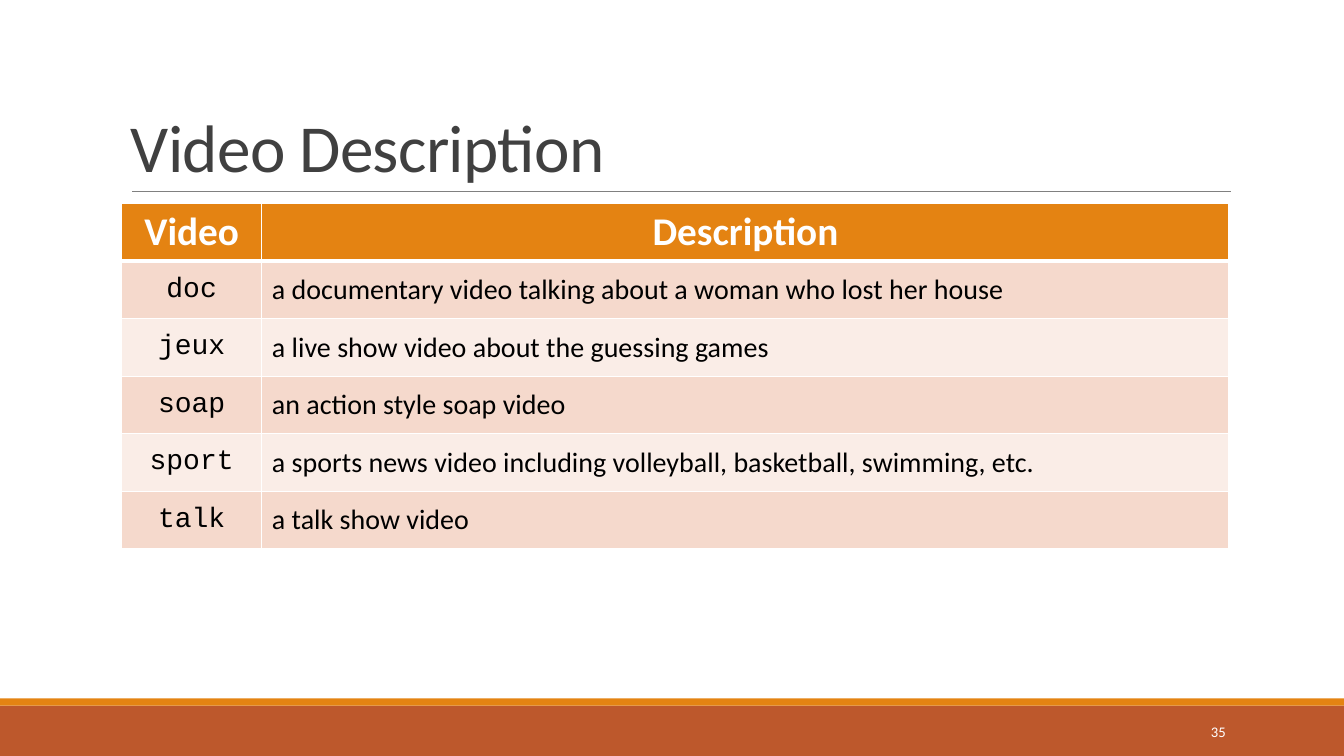
from lxml import etree
from pptx import Presentation
from pptx.dml.color import RGBColor
from pptx.enum.shapes import MSO_CONNECTOR, MSO_SHAPE
from pptx.enum.text import MSO_ANCHOR, PP_ALIGN
from pptx.oxml.ns import qn
from pptx.util import Cm, Pt

# Content
TITLE = "Video Description"
PAGE_NUMBER = "35"
HEADERS = ("Video", "Description")
VIDEOS = [
    ("doc", "a documentary video talking about a woman who lost her house"),
    ("jeux", "a live show video about the guessing games"),
    ("soap", "an action style soap video"),
    ("sport", "a sports news video including volleyball, basketball, swimming, etc."),
    ("talk", "a talk show video"),
]

# Style
ORANGE = RGBColor(0xE4, 0x83, 0x12)
RUST = RGBColor(0xBD, 0x58, 0x2C)
ROW_TINTS = (RGBColor(0xF5, 0xD9, 0xCC), RGBColor(0xFA, 0xED, 0xE7))
WHITE = RGBColor(0xFF, 0xFF, 0xFF)
BLACK = RGBColor(0, 0, 0)
DARK_GRAY = RGBColor(0x40, 0x40, 0x40)
GRAY = RGBColor(0x80, 0x80, 0x80)
SANS, MONO = "Calibri", "Courier New"
LEFT, CENTER, RIGHT = PP_ALIGN.LEFT, PP_ALIGN.CENTER, PP_ALIGN.RIGHT
MIDDLE, BOTTOM = MSO_ANCHOR.MIDDLE, MSO_ANCHOR.BOTTOM

# Layout in centimetres
PAGE_WIDTH, PAGE_HEIGHT = 33.87, 19.05
FOOTER_TOP, STRIPE_TOP = 17.78, 17.6
RULE_LEFT, RULE_RIGHT, RULE_TOP = 3.33, 31.01, 4.82
TABLE_LEFT, TABLE_TOP = 3.06, 5.13
COLUMN_WIDTHS = (3.54, 24.37)
ROW_HEIGHT = 1.45


def write(frame, text, size, color, align, font=SANS, bold=False):
    para = frame.paragraphs[0]
    para.alignment = align
    span = para.add_run()
    span.text = text
    span.font.name = font
    span.font.size = Pt(size)
    span.font.bold = bold
    span.font.color.rgb = color
    return para, span


def add_text(page, area, anchor, *style):
    box = page.shapes.add_textbox(*(Cm(length) for length in area))
    frame = box.text_frame
    frame.word_wrap = True
    frame.vertical_anchor = anchor
    return write(frame, *style)


def add_band(page, top, bottom, color):
    band = page.shapes.add_shape(
        MSO_SHAPE.RECTANGLE, 0, Cm(top), Cm(PAGE_WIDTH), Cm(bottom - top))
    band.shadow.inherit = False
    band.fill.solid()
    band.fill.fore_color.rgb = color
    band.line.fill.background()


def add_borders(cell, widths):
    properties = cell._tc.get_or_add_tcPr()
    for side, width in widths.items():
        line = etree.SubElement(properties, qn(f"a:ln{side}"), w=str(Pt(width)))
        fill = etree.SubElement(line, qn("a:solidFill"))
        etree.SubElement(fill, qn("a:srgbClr"), val=str(WHITE))


def add_video_table(page):
    rows = [HEADERS] + VIDEOS
    table = page.shapes.add_table(
        len(rows), len(HEADERS), Cm(TABLE_LEFT), Cm(TABLE_TOP),
        Cm(sum(COLUMN_WIDTHS)), Cm(ROW_HEIGHT * len(rows))).table
    for column, width in zip(table.columns, COLUMN_WIDTHS):
        column.width = Cm(width)
    for r, texts in enumerate(rows):
        table.rows[r].height = Cm(ROW_HEIGHT)
        for c, text in enumerate(texts):
            cell = table.cell(r, c)
            cell.vertical_anchor = MIDDLE
            # The rule under the header is thicker than the grid
            add_borders(cell, {"L": 1, "R": 1, "T": 3 if r == 1 else 1,
                               "B": 3 if r == 0 else 1})
            cell.fill.solid()
            if r == 0:
                cell.fill.fore_color.rgb = ORANGE
                write(cell.text_frame, text, 28, WHITE, CENTER, bold=True)
            else:
                cell.fill.fore_color.rgb = ROW_TINTS[(r - 1) % 2]
                align, font = (CENTER, MONO) if c == 0 else (LEFT, SANS)
                write(cell.text_frame, text, 20, BLACK, align, font)


def main():
    deck = Presentation()
    deck.slide_width, deck.slide_height = Cm(PAGE_WIDTH), Cm(PAGE_HEIGHT)
    page = deck.slides.add_slide(deck.slide_layouts[6])

    # Footer bands and title rule
    add_band(page, FOOTER_TOP, PAGE_HEIGHT, RUST)
    add_band(page, STRIPE_TOP, FOOTER_TOP, ORANGE)
    rule = page.shapes.add_connector(
        MSO_CONNECTOR.STRAIGHT, Cm(RULE_LEFT), Cm(RULE_TOP), Cm(RULE_RIGHT), Cm(RULE_TOP))
    rule.line.color.rgb = GRAY
    rule.line.width = Pt(0.5)
    etree.SubElement(rule._element.spPr, qn("a:effectLst"))

    # Title and page number
    para, span = add_text(page, (3.05, 0.79, 27.94, 4.03), BOTTOM,
                          TITLE, 48, DARK_GRAY, LEFT)
    para.line_spacing = 0.85
    span.font._element.set("spc", "-50")
    add_text(page, (27.51, 17.93, 3.63, 1.02), MIDDLE,
             PAGE_NUMBER, 10.5, WHITE, RIGHT)

    add_video_table(page)
    deck.save("out.pptx")


if __name__ == "__main__":
    main()
